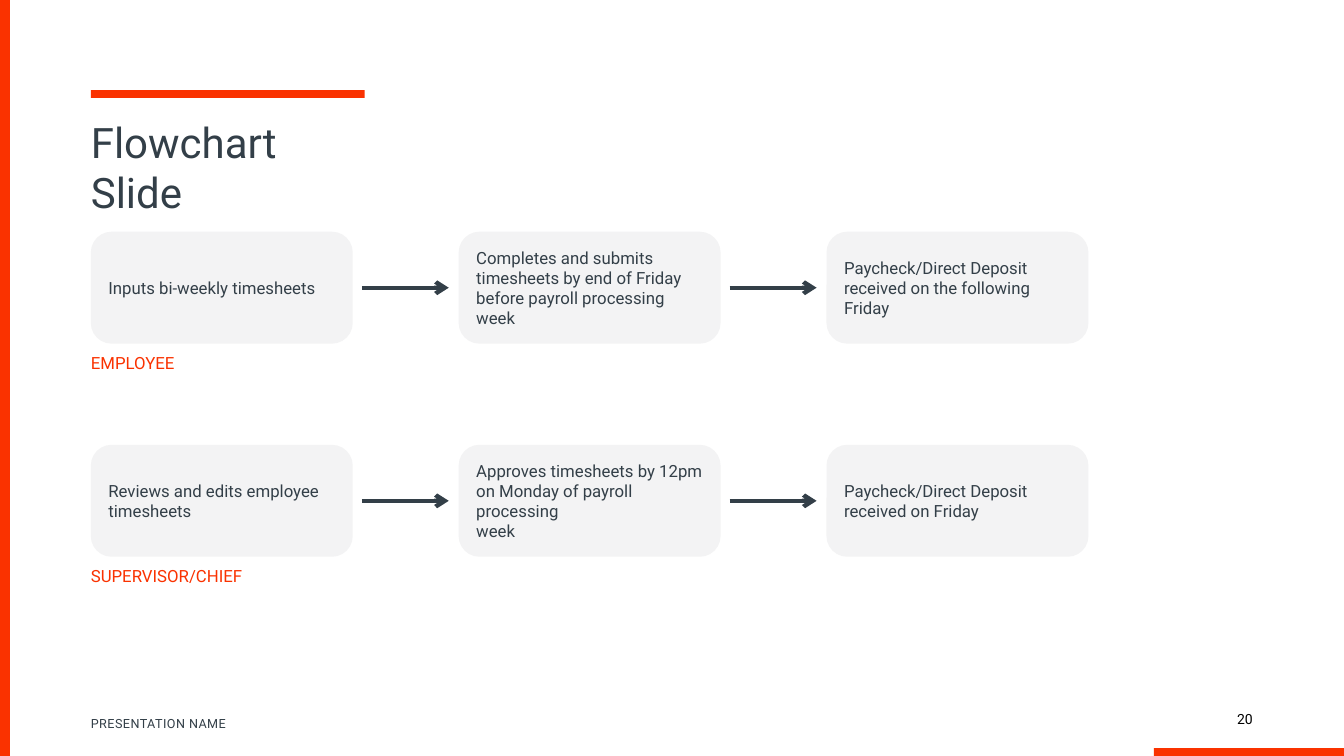
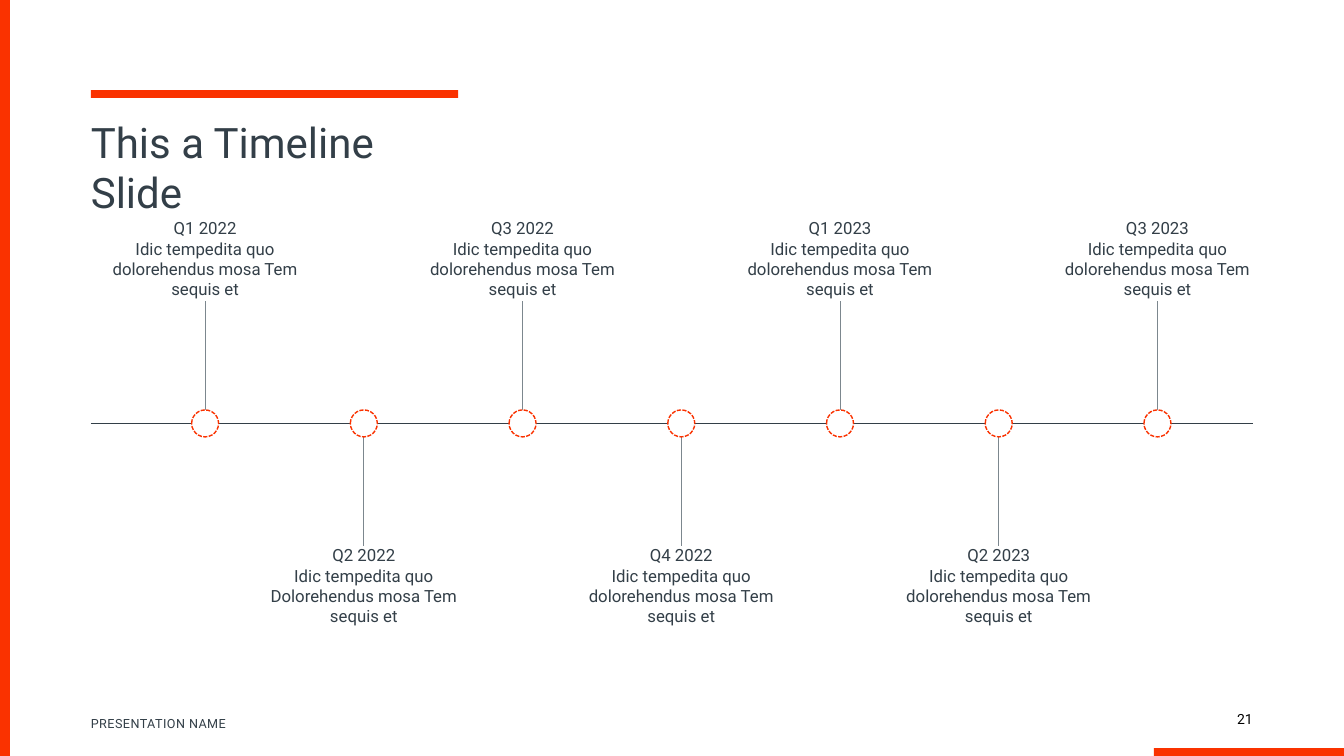
from lxml.etree import SubElement
from pptx import Presentation
from pptx.dml.color import RGBColor
from pptx.enum.dml import MSO_LINE_DASH_STYLE as Dash
from pptx.enum.shapes import MSO_CONNECTOR as Connector, MSO_SHAPE as Shape
from pptx.enum.text import MSO_ANCHOR as Anchor, MSO_AUTO_SIZE as AutoSize, PP_ALIGN as Align
from pptx.oxml.ns import qn
from pptx.util import Cm, Pt

FONT = "Roboto"
ORANGE, SLATE, GREY = "FA3200", "333F48", "7C878E"
PALE, WHITE, BLACK = "F3F3F4", "FFFFFF", "000000"
SLIDE_WIDTH, SLIDE_HEIGHT = 33.87, 19.05
LEFT, RIGHT = 2.29, 31.57
LINE_PITCH = 14.4

FLOW_ROWS = [
    ("EMPLOYEE", [
        ["Inputs bi-weekly timesheets"],
        ["Completes and submits", "timesheets by end of Friday", "before payroll processing week"],
        ["Paycheck/Direct Deposit", "received on the following Friday"],
    ]),
    ("SUPERVISOR/CHIEF", [
        ["Reviews and edits employee", "timesheets"],
        ["Approves timesheets by 12pm", "on Monday of payroll processing", "week"],
        ["Paycheck/Direct Deposit", "received on Friday"],
    ]),
]
MILESTONES = [
    (quarter, ["Idic tempedita quo", f"{word} mosa Tem", "sequis et"])
    for quarter, word in [
        ("Q1 2022", "dolorehendus"), ("Q2 2022", "Dolorehendus"),
        ("Q3 2022", "dolorehendus"), ("Q4 2022", "dolorehendus"),
        ("Q1 2023", "dolorehendus"), ("Q2 2023", "dolorehendus"),
        ("Q3 2023", "dolorehendus"),
    ]
]


def rgb(value):
    """Turn a hex string into a colour."""
    return RGBColor.from_string(value)


def write(shape, lines, size=12, color=SLATE, align=Align.LEFT, anchor=Anchor.TOP,
          insets=(0, 0, 0, 0), pitch=LINE_PITCH, spacing=None):
    """Write one paragraph per line into a shape and return nothing."""
    frame = shape.text_frame
    frame.word_wrap = True
    frame.auto_size = AutoSize.NONE
    frame.vertical_anchor = anchor
    frame.margin_left, frame.margin_top, frame.margin_right, frame.margin_bottom = map(Cm, insets)
    for index, line in enumerate(lines):
        paragraph = frame.add_paragraph() if index else frame.paragraphs[0]
        paragraph.alignment = align
        paragraph.space_before = Pt(0)
        if pitch:
            paragraph.line_spacing = Pt(pitch)
        run = paragraph.add_run()
        run.text = line
        run.font.name = FONT
        run.font.size = Pt(size)
        run.font.color.rgb = rgb(color)
        if spacing:
            run._r.get_or_add_rPr().set("spc", str(spacing))


def add_text(slide, box, lines, **style):
    """Add a text box at left, top, width, height."""
    write(slide.shapes.add_textbox(*map(Cm, box)), lines, **style)


def add_block(slide, kind, box, fill):
    """Add a flat shape without outline or shadow."""
    shape = slide.shapes.add_shape(kind, *map(Cm, box))
    shape.shadow.inherit = False
    shape.fill.solid()
    shape.fill.fore_color.rgb = rgb(fill)
    shape.line.fill.background()
    return shape


def add_line(slide, start, end, color, width, arrow=False):
    """Add a straight line, with an arrowhead at its end if wanted."""
    line = slide.shapes.add_connector(Connector.STRAIGHT, *map(Cm, start + end))
    line.line.color.rgb = rgb(color)
    line.line.width = Pt(width)
    if arrow:
        SubElement(line.line._get_or_add_ln(), qn("a:tailEnd"), type="arrow")
    SubElement(line._element.spPr, qn("a:effectLst"))


def add_base_slide(presentation, title, title_width, number):
    """Add a slide with its title, bands and footer."""
    slide = presentation.slides.add_slide(presentation.slide_layouts[5])
    add_block(slide, Shape.RECTANGLE, (0, 0, 0.25, SLIDE_HEIGHT), ORANGE)
    add_block(slide, Shape.RECTANGLE, (29.08, 18.85, SLIDE_WIDTH - 29.08, 0.2), ORANGE)
    add_block(slide, Shape.RECTANGLE, (LEFT, 2.27, title_width, 0.2), ORANGE)
    heading = slide.shapes.title
    heading.left, heading.top = Cm(LEFT), Cm(2.29)
    heading.width, heading.height = Cm(title_width), Cm(3.2)
    write(heading, [title], size=30, insets=(0, 0.64, 0.2, 0), pitch=36)
    add_text(slide, (LEFT, 18.03, 13.97, 0.39), ["PRESENTATION NAME"], size=9,
             anchor=Anchor.BOTTOM, pitch=None, spacing=30)
    add_text(slide, (RIGHT - 1.5, 17.91, 1.5, 0.43), [str(number)], size=10, color=BLACK,
             align=Align.RIGHT, anchor=Anchor.BOTTOM, pitch=None)
    return slide


def add_flow_row(slide, left, top, label, steps):
    """Add a row of steps joined by arrows, with a label below."""
    width, height, step_pitch = 6.6, 2.82, 9.27
    for index, lines in enumerate(steps):
        step_left = left + index * step_pitch
        step = add_block(slide, Shape.ROUNDED_RECTANGLE, (step_left, top, width, height), PALE)
        step.adjustments[0] = 0.185
        write(step, lines, anchor=Anchor.MIDDLE, insets=(0.29, 0, 0.25, 0))
        if index:
            middle = top + height / 2
            add_line(slide, (step_left - 2.44, middle), (step_left - 0.25, middle),
                     SLATE, 3, arrow=True)
    add_text(slide, (left, top + 3.05, width, 0.58), [label], color=ORANGE)


def add_milestone(slide, center, axis, above, lines):
    """Add a marker on the axis with a stem and text above or below."""
    radius, stem, width, height = 0.34, 3.08, 5.72, 2.01
    stem_end = axis - stem if above else axis + stem
    add_line(slide, (center, axis), (center, stem_end), GREY, 0.75)
    marker = add_block(slide, Shape.OVAL,
                       (center - radius, axis - radius, 2 * radius, 2 * radius), WHITE)
    marker.line.color.rgb = rgb(ORANGE)
    marker.line.width = Pt(1)
    marker.line.dash_style = Dash.SQUARE_DOT
    text_top = stem_end - height - 0.07 if above else stem_end
    add_text(slide, (center - width / 2, text_top, width, height), lines,
             align=Align.CENTER, anchor=Anchor.MIDDLE)


def build_flowchart(presentation):
    """Build the flowchart slide."""
    slide = add_base_slide(presentation, "Flowchart Slide", 6.9, 20)
    for index, (label, steps) in enumerate(FLOW_ROWS):
        add_flow_row(slide, LEFT, 5.84 + index * 5.37, label, steps)


def build_timeline(presentation):
    """Build the timeline slide."""
    slide = add_base_slide(presentation, "This a Timeline Slide", 9.26, 21)
    axis = 10.67
    add_line(slide, (LEFT, axis), (RIGHT, axis), SLATE, 0.75)
    for index, (quarter, lines) in enumerate(MILESTONES):
        add_milestone(slide, 5.17 + index * 4, axis, index % 2 == 0, [quarter, *lines])


def main():
    """Build and save the presentation."""
    presentation = Presentation()
    presentation.slide_width, presentation.slide_height = Cm(SLIDE_WIDTH), Cm(SLIDE_HEIGHT)
    build_flowchart(presentation)
    build_timeline(presentation)
    presentation.save("out.pptx")


if __name__ == "__main__":
    main()
